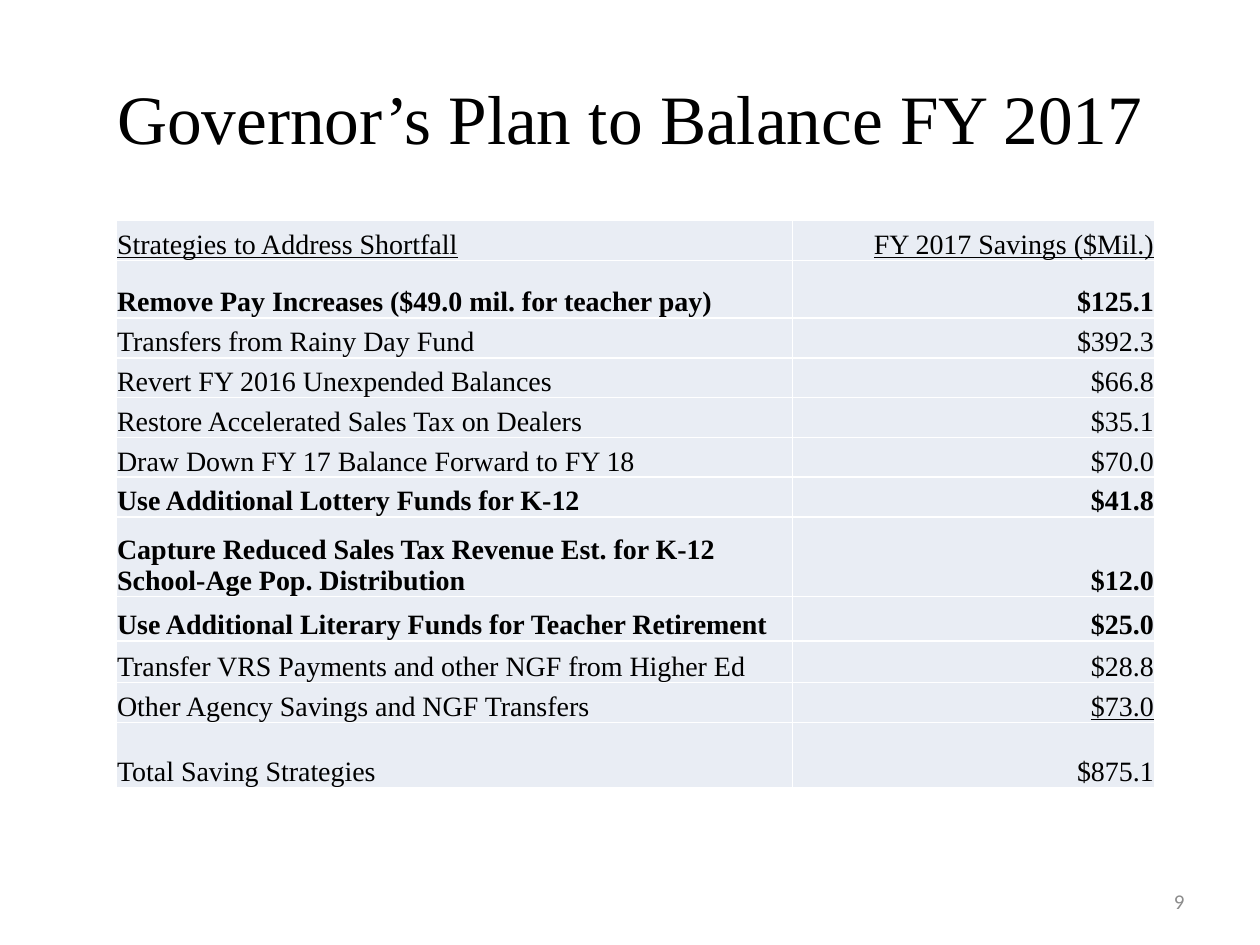
import pptx
import pptx.dml.color
import pptx.enum.text
import pptx.oxml
import pptx.oxml.ns
import pptx.util

Pt = pptx.util.Pt
ALIGN = pptx.enum.text.PP_ALIGN
ANCHOR = pptx.enum.text.MSO_ANCHOR
SERIF = "Times New Roman"
ROW = 22.75
ROWS = [
    ("Strategies to Address Shortfall", "FY 2017 Savings ($Mil.)", ROW, "u", "u"),
    ("Remove Pay Increases ($49.0 mil. for teacher pay)", "$125.1", 33, "b", "b"),
    ("Transfers from Rainy Day Fund", "$392.3", ROW, "", ""),
    ("Revert FY 2016 Unexpended Balances", "$66.8", ROW, "", ""),
    ("Restore Accelerated Sales Tax on Dealers", "$35.1", ROW, "", ""),
    ("Draw Down FY 17 Balance Forward to FY 18", "$70.0", ROW, "", ""),
    ("Use Additional Lottery Funds for K-12", "$41.8", ROW, "b", "b"),
    ("Capture Reduced Sales Tax Revenue Est. for K-12 School-Age Pop. Distribution",
     "$12.0", 45.5, "b", "b"),
    ("Use Additional Literary Funds for Teacher Retirement", "$25.0", 25.4, "b", "b"),
    ("Transfer VRS Payments and other NGF from Higher Ed", "$28.8", 23.8, "", ""),
    ("Other Agency Savings and NGF Transfers", "$73.0", ROW, "", "u"),
    ("Total Saving Strategies", "$875.1", 37.5, "", ""),
]


def rgb(value):
    """Return the colour for a hex string."""
    return pptx.dml.color.RGBColor.from_string(value)


def apply(obj, values):
    """Set each attribute named in a dict of format values."""
    for name, value in values.items():
        setattr(obj, name, value)


def write(tf, text, align, color="000000", **font):
    """Write one formatted paragraph into a text frame."""
    p = tf.paragraphs[0]
    p.alignment = align
    r = p.add_run()
    r.text = text
    apply(r.font, font)
    r.font.color.rgb = rgb(color)


def add_text(s, box, text, align, **font):
    """Place a vertically centred line of text in a box."""
    tf = s.shapes.add_textbox(*map(Pt, box)).text_frame
    apply(tf, {"word_wrap": True, "vertical_anchor": ANCHOR.MIDDLE})
    write(tf, text, align, **font)


def add_borders(cell, color, width):
    """Draw a solid line on all four sides of a cell."""
    tcPr = cell._tc.get_or_add_tcPr()
    for i, side in enumerate(("lnL", "lnR", "lnT", "lnB")):
        tcPr.insert(i, pptx.oxml.parse_xml(
            f'<a:{side} {pptx.oxml.ns.nsdecls("a")} w="{Pt(width)}"><a:solidFill>'
            f'<a:srgbClr val="{color}"/></a:solidFill></a:{side}>'))


def add_savings_table(s, left, top, widths):
    """Place the table of strategies and their savings."""
    heights = [row[2] for row in ROWS]
    box = map(Pt, (left, top, sum(widths), sum(heights)))
    table = s.shapes.add_table(len(ROWS), len(widths), *box).table
    for column, width in zip(table.columns, widths):
        column.width = Pt(width)
    margins = {"margin_left": Pt(0.7), "margin_right": Pt(0.7),
               "margin_top": Pt(0.7), "margin_bottom": Pt(0)}
    for i, (strategy, saving, height, *styles) in enumerate(ROWS):
        table.rows[i].height = Pt(height)
        columns = zip((strategy, saving), (ALIGN.LEFT, ALIGN.RIGHT), styles)
        for j, (text, align, style) in enumerate(columns):
            cell = table.cell(i, j)
            apply(cell, {"vertical_anchor": ANCHOR.BOTTOM, **margins})
            cell.fill.solid()
            cell.fill.fore_color.rgb = rgb("E9EDF4")
            add_borders(cell, "FFFFFF", 1)
            write(cell.text_frame, text, align, name=SERIF, size=Pt(16),
                  bold=style == "b", underline=style == "u")


def main():
    """Build and save the slide."""
    prs = pptx.Presentation()
    apply(prs, {"slide_width": Pt(720), "slide_height": Pt(540)})
    s = prs.slides.add_slide(prs.slide_layouts[6])
    add_text(s, (36, 21.6, 648, 90), "Governor’s Plan to Balance FY 2017",
             ALIGN.CENTER, name=SERIF, size=Pt(39.6))
    add_savings_table(s, 66.25, 126, (386.5, 207.25))
    add_text(s, (516, 500.5, 168, 28.75), "9", ALIGN.RIGHT,
             color="8C8C8C", name="Calibri", size=Pt(12))
    prs.save("out.pptx")


if __name__ == "__main__":
    main()
